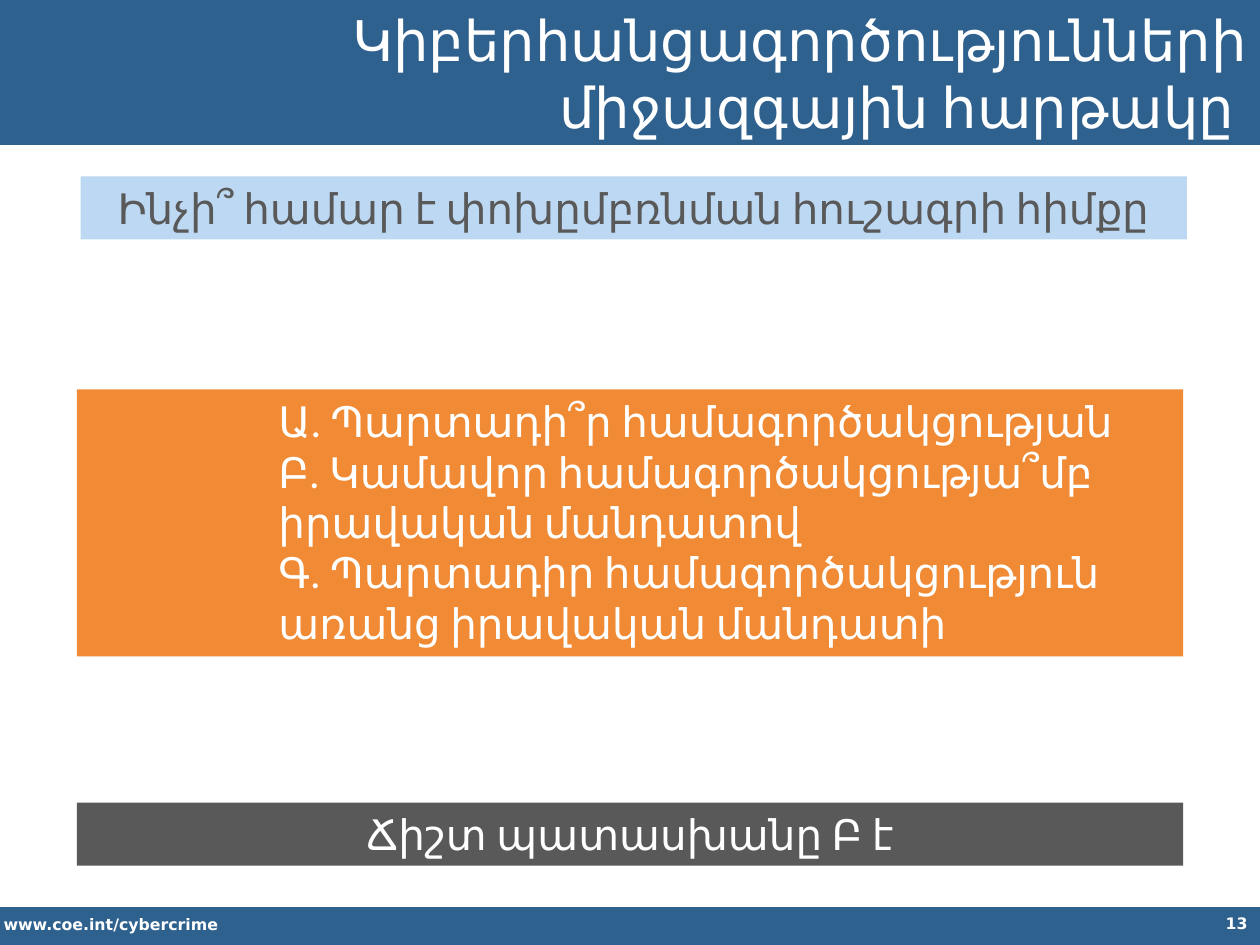
from dataclasses import dataclass

from lxml import etree
from pptx import Presentation
from pptx.dml.color import RGBColor
from pptx.enum.shapes import MSO_SHAPE
from pptx.enum.text import MSO_ANCHOR, MSO_AUTO_SIZE, PP_ALIGN
from pptx.oxml.ns import qn
from pptx.util import Pt

LEFT, CENTER, RIGHT = PP_ALIGN.LEFT, PP_ALIGN.CENTER, PP_ALIGN.RIGHT
TOP, MIDDLE = MSO_ANCHOR.TOP, MSO_ANCHOR.MIDDLE
RECTANGLE = MSO_SHAPE.RECTANGLE
NO_AUTOFIT = MSO_AUTO_SIZE.NONE
PX = 9144


@dataclass(frozen=True)
class Theme:
    blue: str = "2F618F"
    pale_blue: str = "BDD8F3"
    orange: str = "F08A34"
    gray: str = "595959"
    white: str = "FFFFFF"
    font: str = "Calibri"
    footer_font: str = "DejaVu Sans"
    title_size: int = 32
    text_size: int = 24
    footer_size: int = 9


def place(box, left, top, width, height, fill=None):
    box.left, box.top, box.width, box.height = (
        value * PX for value in (left, top, width, height))
    if fill:
        box.fill.solid()
        box.fill.fore_color.rgb = RGBColor.from_string(fill)


def write(box, text, size, color, align, anchor=TOP, font=Theme.font, bold=False):
    frame = box.text_frame
    frame.text = text
    frame.word_wrap = True
    frame.auto_size = NO_AUTOFIT
    frame.vertical_anchor = anchor
    for para in frame.paragraphs:
        para.alignment = align
        for span in para.runs:
            span.font.name = font
            span.font.size = Pt(size)
            span.font.bold = bold
            span.font.color.rgb = RGBColor.from_string(color)


theme = Theme()
deck = Presentation()
deck.slide_width, deck.slide_height = 1000 * PX, 750 * PX
page = deck.slides.add_slide(deck.slide_layouts[1])
title, answers = page.placeholders

for top, height in ((0, 115), (720, 30)):
    bar = page.shapes.add_shape(RECTANGLE, 0, 0, 0, 0)
    place(bar, 0, top, 1000, height, theme.blue)
    bar.line.fill.background()
    bar.shadow.inherit = False
    title._element.addprevious(bar._element)

for left, top, width, height, text, align in (
    (-7, 721, 352, 25, "www.coe.int/cybercrime", LEFT),
    (767, 720, 233, 30, "13", RIGHT),
):
    box = page.shapes.add_textbox(0, 0, 0, 0)
    place(box, left, top, width, height)
    write(box, text, theme.footer_size, theme.white, align,
          font=theme.footer_font, bold=True)

place(title, 220, 7, 780, 101, theme.blue)
write(title, "Կիբերհանցագործությունների միջազգային հարթակը ",
      theme.title_size, theme.white, RIGHT, MIDDLE)

for left, top, fill, color, text in (
    (64, 140, theme.pale_blue, theme.gray, "Ինչի՞ համար է փոխըմբռնման հուշագրի հիմքը"),
    (61, 637, theme.gray, theme.white, "Ճիշտ պատասխանը Բ է"),
):
    box = page.shapes.add_textbox(0, 0, 0, 0)
    place(box, left, top, 878, 50, fill)
    write(box, text, theme.text_size, color, CENTER)

place(answers, 61, 309, 878, 212, theme.orange)
write(answers, "\n".join((
    "Ա. Պարտադի՞ր համագործակցության",
    "Բ. Կամավոր համագործակցությա՞մբ իրավական մանդատով",
    "Գ. Պարտադիր համագործակցություն առանց իրավական մանդատի",
)), theme.text_size, theme.white, LEFT)
for para in answers.text_frame.paragraphs:
    para.level = 3
    para.space_before = Pt(0)
    properties = para._p.get_or_add_pPr()
    properties.set("marL", str(150 * PX))
    properties.set("indent", "0")
    etree.SubElement(properties, qn("a:buNone"))

deck.save("out.pptx")
